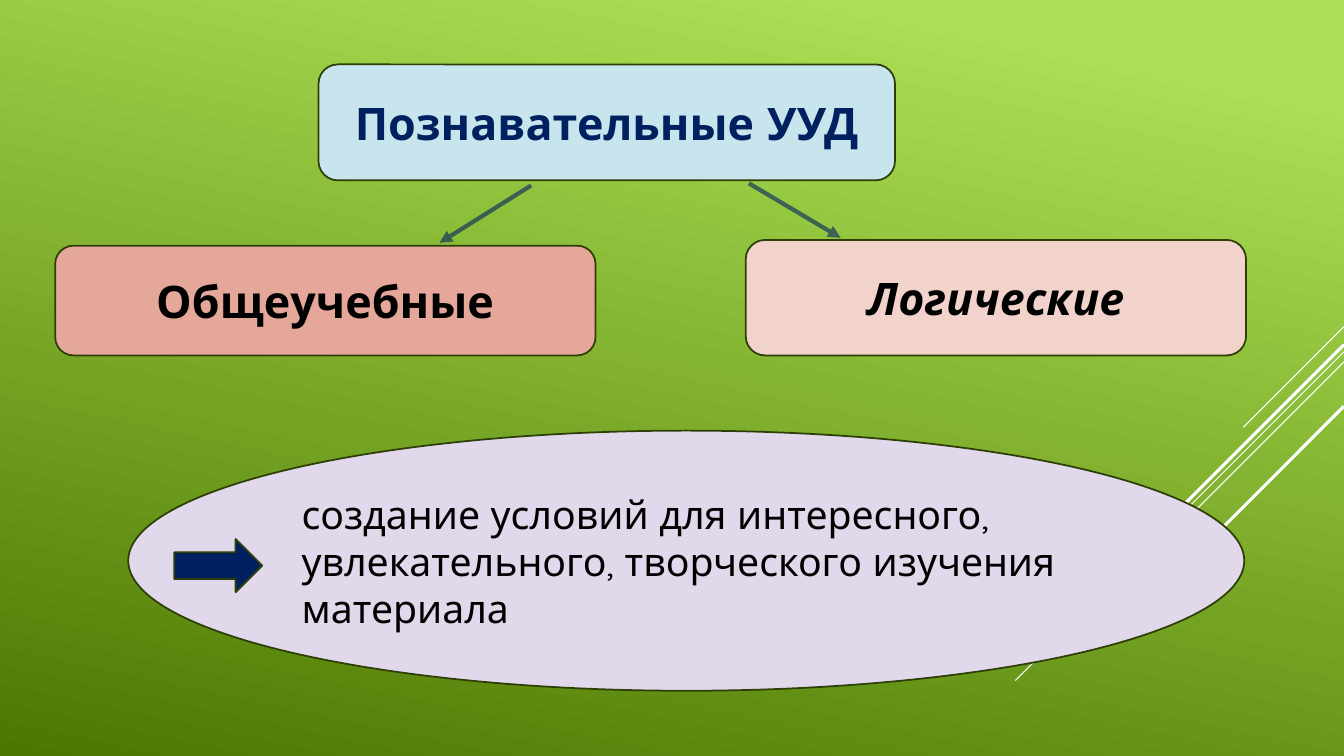
from lxml import etree
from pptx import Presentation
from pptx.dml.color import RGBColor
from pptx.enum.shapes import MSO_CONNECTOR, MSO_SHAPE
from pptx.enum.text import MSO_ANCHOR, MSO_AUTO_SIZE, PP_ALIGN
from pptx.oxml.ns import qn
from pptx.util import Pt

ROUND, OVAL = MSO_SHAPE.ROUNDED_RECTANGLE, MSO_SHAPE.OVAL
ARROW = MSO_SHAPE.RIGHT_ARROW
STRAIGHT = MSO_CONNECTOR.STRAIGHT
MIDDLE, NO_FIT = MSO_ANCHOR.MIDDLE, MSO_AUTO_SIZE.NONE
LEFT, CENTER = PP_ALIGN.LEFT, PP_ALIGN.CENTER

LIME = RGBColor(0xAC, 0xDF, 0x55)
GREEN = RGBColor(0x4C, 0x78, 0x00)
OLIVE = RGBColor(0x2E, 0x3E, 0x07)
NAVY = RGBColor(0x00, 0x20, 0x60)
SKY = RGBColor(0xC8, 0xE5, 0xEE)
CORAL = RGBColor(0xE5, 0xA7, 0x99)
PINK = RGBColor(0xF2, 0xD3, 0xCC)
LILAC = RGBColor(0xE1, 0xD9, 0xEB)
BLACK = RGBColor(0, 0, 0)
WHITE = RGBColor(0xFF, 0xFF, 0xFF)


class Board:
    """Holds the style and the current slide."""
    font = "Quicksand"
    edge = 1.25

    def __init__(self, slide):
        self.slide = slide

    def back(self, stops, angle):
        fill = self.slide.background.fill
        fill.gradient()
        fill.gradient_angle = angle
        for stop, (place, color) in zip(fill.gradient_stops, stops):
            stop.position = place
            stop.color.rgb = color

    def place(self, shape, box):
        for name, value in zip(("left", "top", "width", "height"), box):
            setattr(shape, name, Pt(value))

    def label(self, shape, text, size=32, color=BLACK, align=CENTER, **style):
        frame = shape.text_frame
        frame.text = text
        setup = {"word_wrap": True, "auto_size": NO_FIT,
                 "vertical_anchor": MIDDLE}
        for name, value in setup.items():
            setattr(frame, name, value)
        par = frame.paragraphs[0]
        par.alignment = align
        font = par.runs[0].font
        looks = {"name": self.font, "size": Pt(size), **style}
        for name, value in looks.items():
            setattr(font, name, value)
        font.color.rgb = color

    def shape(self, kind, box, fill):
        item = self.slide.shapes.add_shape(kind, *map(Pt, box))
        item.shadow.inherit = False
        item.fill.solid()
        item.fill.fore_color.rgb = fill
        item.line.color.rgb = OLIVE
        item.line.width = Pt(self.edge)
        return item

    def title(self, box, text, **style):
        item = self.slide.shapes.title
        self.place(item, box)
        self.label(item, text, **style)
        # Bring the title in front of its panel
        tree = item.element.getparent()
        tree.append(item.element)

    def line(self, ends, color, width, alpha=None, head=False):
        item = self.slide.shapes.add_connector(STRAIGHT, *map(Pt, ends))
        item.line.color.rgb = color
        item.line.width = Pt(width)
        props = item.element.spPr
        etree.SubElement(props, qn("a:effectLst"))
        if alpha:
            tint = props.find(".//" + qn("a:srgbClr"))
            etree.SubElement(tint, qn("a:alpha"), val=str(alpha * 1000))
        if head:
            stroke = props.find(qn("a:ln"))
            etree.SubElement(stroke, qn("a:tailEnd"), type="triangle")


def main():
    deck = Presentation()
    deck.slide_width, deck.slide_height = Pt(960), Pt(540)
    board = Board(deck.slides.add_slide(deck.slide_layouts[5]))
    board.back([(0.1, LIME), (1, GREEN)], 258)

    # Diagonal rays: start height on the right edge, run, width
    rays = [(233.3, 72, 0.75), (251.3, 234.7, 0.75), (258.5, 149.3, 0.75),
            (246.2, 137.5, 2.25), (290.2, 100, 2.25)]
    for top, run, width in rays:
        board.line((960, top, 960 - run, top + run), WHITE, width)

    # Heading
    head = (227.5, 46, 411.8, 82.8)
    board.shape(ROUND, head, SKY)
    board.title(head, "Познавательные УУД", color=NAVY, bold=True)

    # Arrows to the two branches
    for ends in ((535, 131, 600.5, 169.9), (379.4, 132.5, 313.9, 173.5)):
        board.line(ends, NAVY, 3, alpha=60, head=True)

    # Branches
    kinds = [("Общеучебные", (39.4, 175.5, 386, 78.4), CORAL, False),
             ("Логические", (532.7, 171.4, 357.4, 82.5), PINK, True)]
    for text, box, fill, slant in kinds:
        item = board.shape(ROUND, box, fill)
        board.label(item, text, bold=True, italic=slant)

    # Aim
    aim = board.shape(OVAL, (91.6, 307.6, 797.2, 185.8), LILAC)
    board.label(aim, "создание условий для интересного, увлекательного, "
                "творческого изучения материала", size=28, align=LEFT)
    board.shape(ARROW, (124.4, 385, 62.9, 38), NAVY)

    deck.save("out.pptx")


if __name__ == "__main__":
    main()
